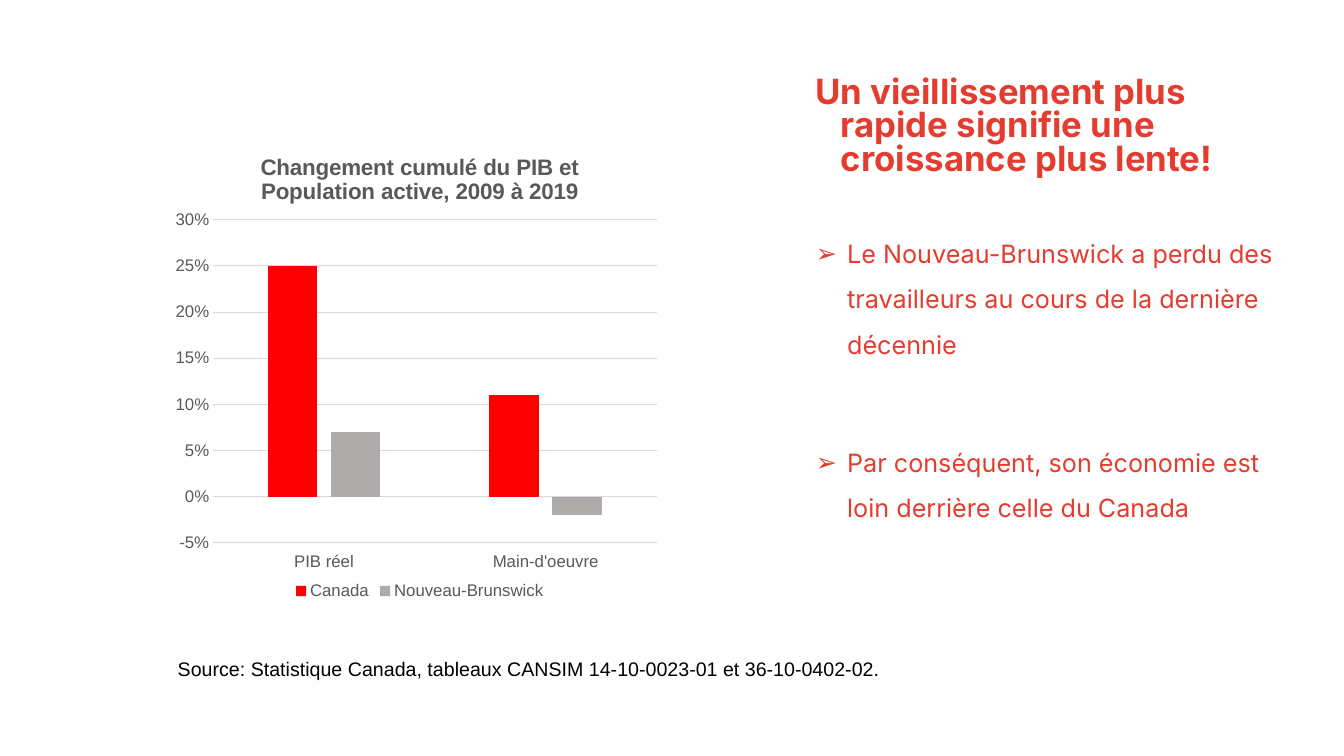
import dataclasses

import pptx
import pptx.chart.data
import pptx.dml.color
import pptx.enum.chart
import pptx.oxml
import pptx.oxml.ns
import pptx.util
from pptx.util import Cm, Pt


@dataclasses.dataclass(frozen=True)
class Theme:
    """Colours, fonts and type sizes of the slide."""
    accent: str = "E43D30"
    canada: str = "FF0000"
    province: str = "AFABAB"
    label: str = "595959"
    grid: str = "D9D9D9"
    ink: str = "000000"
    text_face: str = "Inter"
    chart_face: str = "Arial"
    heading: float = 24.8
    body: float = 18
    chart_title: float = 16
    source: float = 14
    axis: float = 12


THEME = Theme()


def rgb(value):
    """Turn a hex string into a colour."""
    return pptx.dml.color.RGBColor.from_string(value)


def apply(target, values):
    """Set each named attribute of the target."""
    for name, value in values.items():
        setattr(target, name, value)


def style(font, face, size, color, bold=False):
    """Format a font."""
    apply(font, {"name": face, "size": Pt(size), "bold": bold})
    font.color.rgb = rgb(color)


def add_text(s, box, paragraphs, font, bullet=None, hanging=None, **spacing):
    """Write paragraphs in a text box, with optional bullets and hanging indent."""
    tf = s.shapes.add_textbox(*box).text_frame
    tf.word_wrap = True
    for i, text in enumerate(paragraphs):
        p = tf.paragraphs[0] if i == 0 else tf.add_paragraph()
        pPr = p._p.get_or_add_pPr()
        if hanging:
            margin, indent = hanging
            pPr.set("marL", str(margin))
            pPr.set("indent", str(-indent))
        if bullet:
            ns = pptx.oxml.ns.nsdecls("a")
            for xml in (
                f'<a:buClr {ns}><a:srgbClr val="{THEME.accent}"/></a:buClr>',
                f'<a:buFont {ns} typeface="Arial"/>',
                f'<a:buChar {ns} char="{bullet}"/>',
            ):
                pPr.append(pptx.oxml.parse_xml(xml))
        apply(p, spacing if i else {k: v for k, v in spacing.items() if k != "space_before"})
        r = p.add_run()
        r.text = text
        style(r.font, *font)


def place_plot(chart, x, y, w, h):
    """Fix the inner plot area as fractions of the chart."""
    area = chart._chartSpace.chart.plotArea
    for old in area.findall(pptx.oxml.ns.qn("c:layout")):
        area.remove(old)
    fields = {"layoutTarget": "inner", "xMode": "edge", "yMode": "edge",
              "x": x, "y": y, "w": w, "h": h}
    parts = "".join(f'<c:{k} val="{v}"/>' for k, v in fields.items())
    area.insert(0, pptx.oxml.parse_xml(
        f'<c:layout {pptx.oxml.ns.nsdecls("c")}><c:manualLayout>{parts}'
        '</c:manualLayout></c:layout>'))


def add_growth_chart(s, box):
    """Draw the column chart of cumulative change."""
    enum = pptx.enum.chart
    data = pptx.chart.data.CategoryChartData(number_format="0%")
    data.categories = ["PIB réel", "Main-d'oeuvre"]
    data.add_series("Canada", (0.25, 0.11))
    data.add_series("Nouveau-Brunswick", (0.07, -0.02))
    chart = s.shapes.add_chart(enum.XL_CHART_TYPE.COLUMN_CLUSTERED, *box, data).chart
    label = (THEME.chart_face, THEME.axis, THEME.label)
    style(chart.font, *label)

    chart.has_title = True
    tf = chart.chart_title.text_frame
    tf.text = "Changement cumulé du PIB et\nPopulation active, 2009 à 2019"
    for p in tf.paragraphs:
        style(p.runs[0].font, THEME.chart_face, THEME.chart_title, THEME.label, True)
    chart.chart_title.include_in_layout = False

    chart.has_legend = True
    apply(chart.legend, {"position": enum.XL_LEGEND_POSITION.BOTTOM,
                         "include_in_layout": False})
    style(chart.legend.font, *label)

    plot = chart.plots[0]
    apply(plot, {"gap_width": 219, "overlap": -27, "vary_by_categories": False})
    for series, color in zip(plot.series, (THEME.canada, THEME.province)):
        series.invert_if_negative = False
        series.format.fill.solid()
        series.format.fill.fore_color.rgb = rgb(color)

    values, cats = chart.value_axis, chart.category_axis
    for axis in (values, cats):
        apply(axis, {"major_tick_mark": enum.XL_TICK_MARK.NONE,
                     "minor_tick_mark": enum.XL_TICK_MARK.NONE})
        style(axis.tick_labels.font, *label)
    apply(values, {"minimum_scale": -0.05, "maximum_scale": 0.3,
                   "major_unit": 0.05, "has_major_gridlines": True})
    apply(values.tick_labels, {"number_format": "0%", "number_format_is_linked": False})
    values.format.line.fill.background()
    cats.tick_label_position = enum.XL_TICK_LABEL_POSITION.LOW
    for line in (values.major_gridlines.format.line, cats.format.line):
        line.width = Pt(0.75)
        line.color.rgb = rgb(THEME.grid)
    place_plot(chart, 0.09, 0.18, 0.88, 0.69)


def add_message(s, box):
    """Place the heading and the bullet points in the right column."""
    x, y, w, h = box
    body_top = Cm(3.66)
    add_text(s, (x, y, w, Cm(3.3)),
             ["Un vieillissement plus rapide signifie une croissance plus lente!"],
             (THEME.text_face, THEME.heading, THEME.accent, True),
             hanging=(Cm(1.27), Cm(0.64)), line_spacing=0.8)
    add_text(s, (x, y + body_top, w, h - body_top),
             ["Le Nouveau-Brunswick a perdu des travailleurs au cours de la dernière décennie",
              "Par conséquent, son économie est loin derrière celle du Canada"],
             (THEME.text_face, THEME.body, THEME.accent),
             bullet="➢", hanging=(Cm(1.43), Cm(0.79)),
             line_spacing=1.5, space_before=Pt(52))


def add_source(s, box):
    """Write the source line under the chart."""
    add_text(s, box,
             ["Source: Statistique Canada, tableaux CANSIM 14-10-0023-01 et 36-10-0402-02."],
             (THEME.chart_face, THEME.source, THEME.ink))


def main():
    """Build and save the slide."""
    prs = pptx.Presentation()
    apply(prs, {"slide_width": Cm(33.87), "slide_height": Cm(19.05)})
    s = prs.slides.add_slide(prs.slide_layouts[6])
    left = Cm(4.23)
    add_message(s, (Cm(19.67), Cm(1.84), Cm(12.93), Cm(14.65)))
    add_source(s, (left, Cm(16.43), Cm(23.77), Cm(0.86)))
    add_growth_chart(s, (left, Cm(3.41), Cm(12.7), Cm(11.81)))
    prs.save("out.pptx")


if __name__ == "__main__":
    main()
